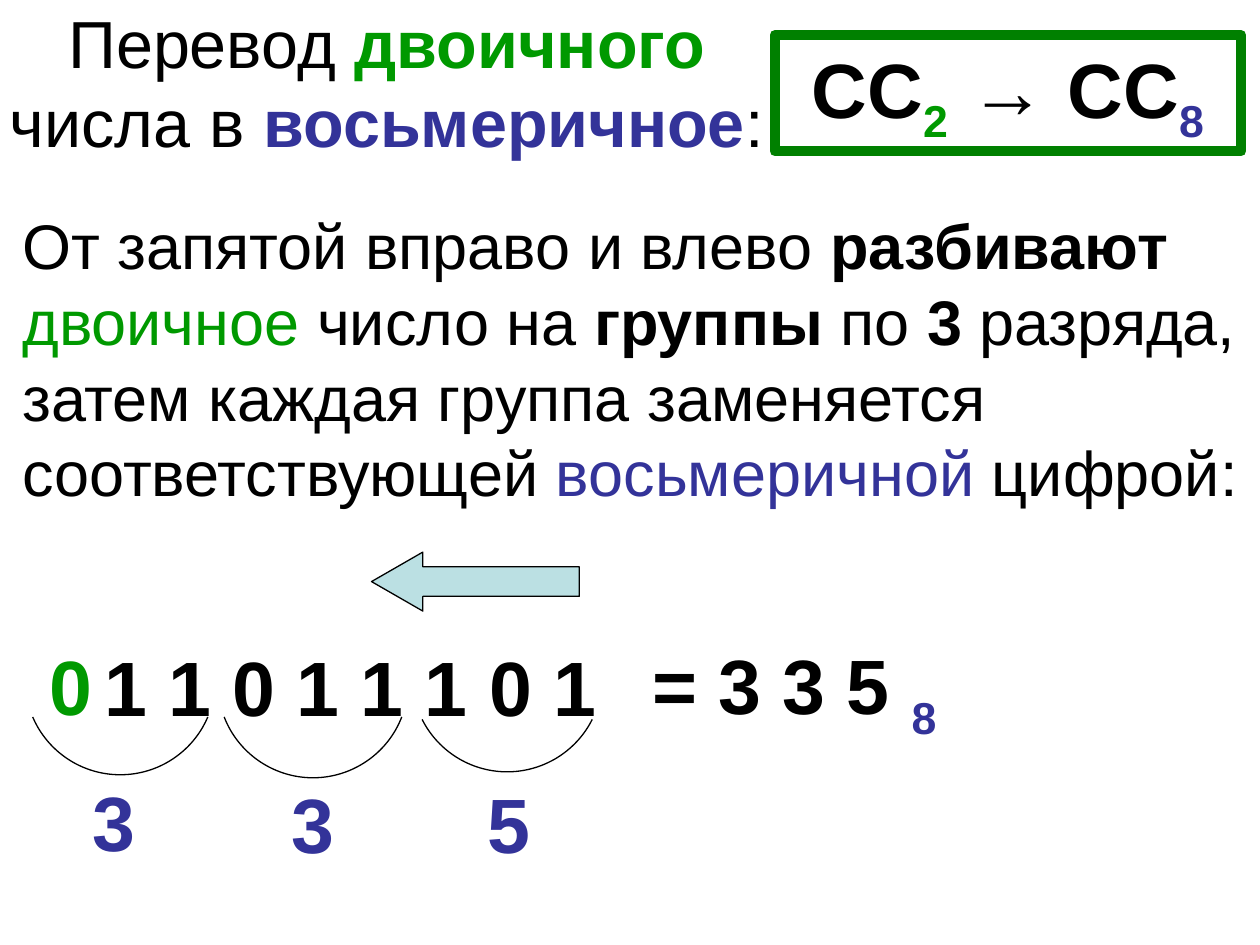
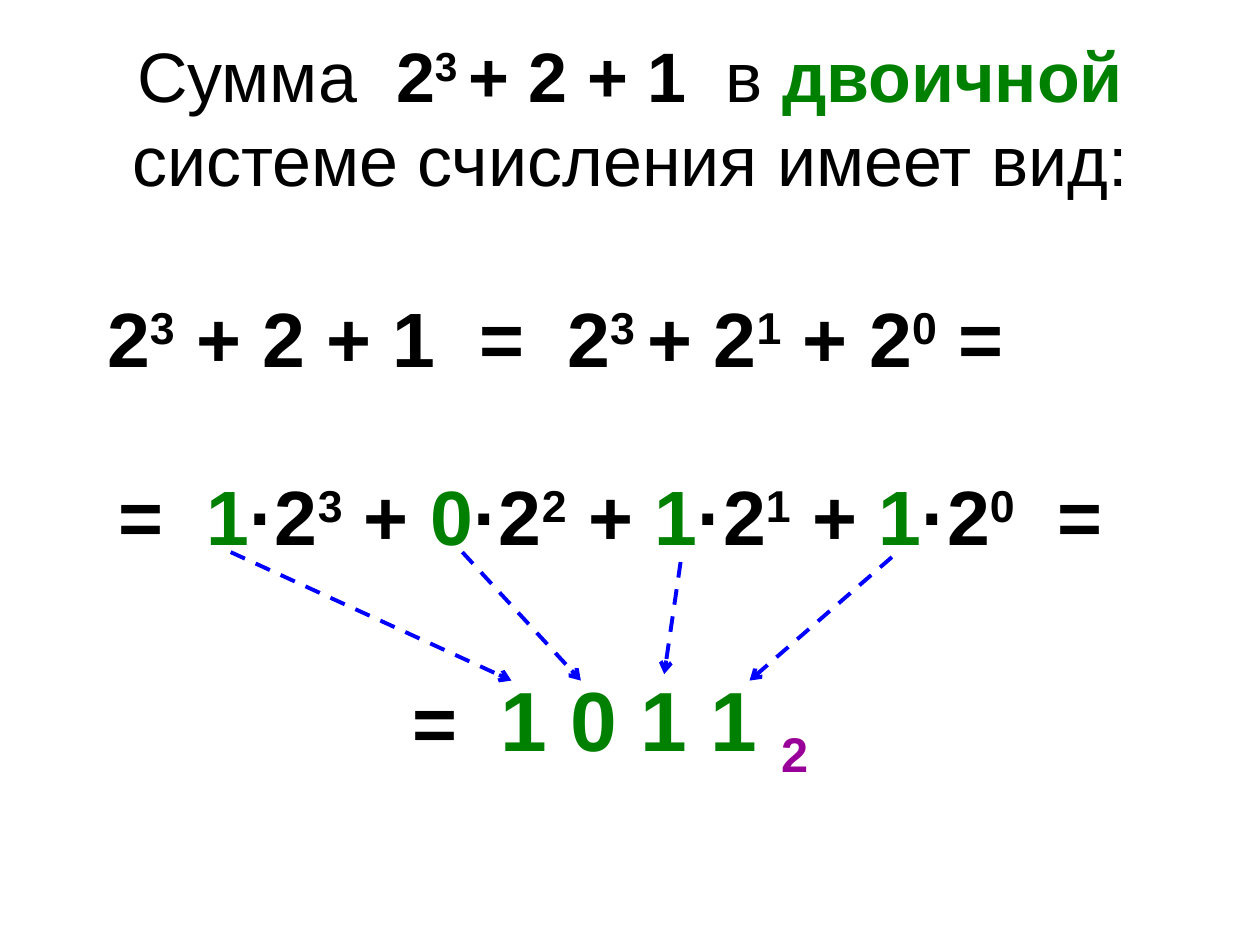
import math
from dataclasses import dataclass
from typing import Optional

from lxml import etree
from pptx import Presentation
from pptx import util as u
from pptx.dml.color import RGBColor
from pptx.enum import dml, shapes, text
from pptx.oxml import ns

Cm = u.Cm
CENTER = text.PP_ALIGN.CENTER
LEFT = text.PP_ALIGN.LEFT


@dataclass(frozen=True)
class Theme:
    font: str = "Arial"
    ink: str = "000000"
    paper: str = "FFFFFF"
    binary: str = "009900"
    dark_green: str = "008000"
    octal: str = "333399"
    base_two: str = "990099"
    arrow: str = "0000FF"
    arrow_fill: str = "BBE0E3"
    octal_title: int = 38
    sum_title: int = 40
    body: int = 36
    formula: int = 44
    answer: int = 48


THEME = Theme()


@dataclass(frozen=True)
class Span:
    """A stretch of text; None keeps the setting of its paragraph."""
    words: str
    color: Optional[str] = None
    bold: Optional[bool] = None
    size: Optional[int] = None
    baseline: int = 0
    spacing: float = 0


def sup(words):
    return Span(words, baseline=30)


def sub(words, color):
    return Span(words, color, baseline=-25)


def wide_space(size):
    """A single space, tracked out to the width of two."""
    return Span(" ", spacing=size * 0.28)


def rgb(color):
    return RGBColor.from_string(color)


def write(frame, spans, size, bold=False, align=LEFT):
    frame.word_wrap = True
    paragraph = frame.paragraphs[0]
    paragraph.alignment = align
    paragraph.font.name = THEME.font
    paragraph.font.size = u.Pt(size)
    paragraph.font.bold = bold
    paragraph.font.color.rgb = rgb(THEME.ink)
    for span in spans:
        run = paragraph.add_run()
        run.text = span.words
        if span.color:
            run.font.color.rgb = rgb(span.color)
        if span.bold is not None:
            run.font.bold = span.bold
        if span.size:
            run.font.size = u.Pt(span.size)
        properties = run._r.get_or_add_rPr()
        if span.baseline:
            properties.set("baseline", str(span.baseline * 1000))
        if span.spacing:
            properties.set("spc", str(round(span.spacing * 100)))


def add_titled_slide(deck, box, spans, size):
    slide = deck.slides.add_slide(deck.slide_layouts[5])
    title = slide.shapes.title
    title.left, title.top, title.width, title.height = map(Cm, box)
    title.text_frame.vertical_anchor = text.MSO_ANCHOR.MIDDLE
    write(title.text_frame, spans, size, align=CENTER)
    title.text_frame.auto_size = text.MSO_AUTO_SIZE.NONE
    return slide


def add_text(slide, box, spans, size=THEME.formula, bold=True, align=CENTER,
             side_inset=0.25, end_inset=0.13):
    frame = slide.shapes.add_textbox(*map(Cm, box)).text_frame
    frame.margin_left = frame.margin_right = Cm(side_inset)
    frame.margin_top = frame.margin_bottom = Cm(end_inset)
    write(frame, spans, size, bold, align)


def add_preset(slide, kind, box, line_width, line_color=THEME.ink, fill=None):
    shape = slide.shapes.add_shape(kind, *map(Cm, box))
    shape.shadow.inherit = False
    shape.line.color.rgb = rgb(line_color)
    shape.line.width = u.Pt(line_width)
    if fill:
        shape.fill.solid()
        shape.fill.fore_color.rgb = rgb(fill)
    else:
        shape.fill.background()
    return shape


def add_group_arc(slide, left, right, bottom, radius=1.92):
    """Bracket one group of bits from below with part of a circle."""
    middle = (left + right) / 2
    box = (middle - radius, bottom - 2 * radius, 2 * radius, 2 * radius)
    arc = add_preset(slide, shapes.MSO_SHAPE.ARC, box, 0.75)
    half_angle = math.degrees(math.asin((right - left) / 2 / radius))
    for index, angle in enumerate((90 - half_angle, 90 + half_angle)):
        arc.adjustments[index] = angle * 0.6  # 60000 units a degree, scaled by 100000


def add_digit_arrow(slide, start, end):
    arrow = slide.shapes.add_connector(
        shapes.MSO_CONNECTOR.STRAIGHT, *map(Cm, (*start, *end)))
    arrow.line.color.rgb = rgb(THEME.arrow)
    arrow.line.width = u.Pt(2.25)
    arrow.line.dash_style = dml.MSO_LINE.DASH
    etree.SubElement(arrow.line._get_or_add_ln(), ns.qn("a:tailEnd"), type="arrow")
    etree.SubElement(arrow._element.spPr, ns.qn("a:effectLst"))


def build_octal_slide(deck):
    slide = add_titled_slide(deck, (-0.15, 0.05, 15.9, 3.18), [
        Span("Перевод "),
        Span("двоичного", THEME.binary, True),
        Span(" числа в "),
        Span("восьмеричное", THEME.octal, True),
        Span(":"),
    ], THEME.octal_title)

    rule = add_preset(slide, shapes.MSO_SHAPE.RECTANGLE, (15.62, 0.71, 9.4, 2.34),
                      6, THEME.dark_green)
    rule.text_frame.vertical_anchor = text.MSO_ANCHOR.TOP
    write(rule.text_frame, [
        Span("CC"), sub("2", THEME.binary), Span(" → CC"), sub("8", THEME.octal),
    ], THEME.formula, True, CENTER)

    add_text(slide, (0.2, 4.04, 25.4, 6.35), [
        Span("От запятой вправо и влево "),
        Span("разбивают ", bold=True),
        Span("двоичное", THEME.binary),
        Span(" число на "),
        Span("группы", bold=True),
        Span(" по "),
        Span("3", bold=True),
        Span(" разряда, затем каждая группа заменяется соответствующей "),
        Span("восьмеричной", THEME.octal),
        Span(" цифрой:"),
    ], THEME.body, bold=False, align=LEFT)

    add_text(slide, (1.57, 12.9, 11, 1.85), [Span("1 1 0 1 1 1 0 1")], end_inset=0)
    for left, right, bottom in ((8.51, 11.94, 15.56), (4.52, 8.1, 15.68),
                                (0.66, 4.19, 15.62)):
        add_group_arc(slide, left, right, bottom)
    direction = add_preset(slide, shapes.MSO_SHAPE.LEFT_ARROW,
                           (7.49, 11.13, 4.19, 1.19), 0.75, fill=THEME.arrow_fill)
    direction.adjustments[0] = 0.5
    direction.adjustments[1] = 0.87
    add_text(slide, (0.94, 12.88, 0.99, 1.85), [Span("0", THEME.binary)],
             side_inset=0, end_inset=0)
    for digit, left, top in (("5", 9.25, 15.52), ("3", 5.31, 15.52), ("3", 1.3, 15.49)):
        add_text(slide, (left, top, 2.01, 2.11), [Span(digit, THEME.octal)])
    add_text(slide, (12.9, 12.73, 6.4, 2.11),
             [Span("= 3 3 5 "), sub("8", THEME.octal)], align=LEFT)


def build_sum_slide(deck):
    title_gap = wide_space(THEME.sum_title)
    gap = wide_space(THEME.formula)
    slide = add_titled_slide(deck, (1.27, 0.76, 22.86, 3.18), [
        Span("Сумма"), title_gap,
        Span("2", bold=True),
        Span("3 ", bold=True, baseline=30),
        Span("+ 2 + 1", bold=True), title_gap,
        Span("в "),
        Span("двоичной", THEME.dark_green, True),
        Span(" системе счисления имеет вид:"),
    ], THEME.sum_title)

    add_text(slide, (1.91, 5.72, 19.41, 2.11), [
        Span("2"), sup("3"), Span(" + 2 + 1"), gap, Span("="), gap,
        Span("2"), sup("3 "), Span("+ 2"), sup("1"), Span(" + 2"), sup("0"), Span(" ="),
    ], align=LEFT)

    expansion = [Span("="), gap]
    for power, bit in zip((3, 2, 1, 0), "1011"):
        expansion += [Span(bit, THEME.dark_green), Span("·2"), sup(str(power)),
                      Span(" + ") if power else gap]
    add_text(slide, (1.91, 9.32, 20.8, 2.11), [*expansion, Span("=")])

    add_text(slide, (1.91, 13.33, 20.8, 2.29), [
        Span("="), gap,
        Span("1 0 1 1 ", THEME.dark_green, size=THEME.answer),
        Span("2", THEME.base_two, size=THEME.answer, baseline=-25),
    ])
    for start, end in (((4.65, 11.13), (10.31, 13.72)),
                       ((9.32, 11.13), (11.71, 13.72)),
                       ((13.72, 11.33), (13.39, 13.59)),
                       ((17.98, 11.23), (15.11, 13.72))):
        add_digit_arrow(slide, start, end)


def main():
    deck = Presentation()
    deck.slide_width, deck.slide_height = Cm(25.4), Cm(19.05)
    build_octal_slide(deck)
    build_sum_slide(deck)
    deck.save("out.pptx")


if __name__ == "__main__":
    main()
